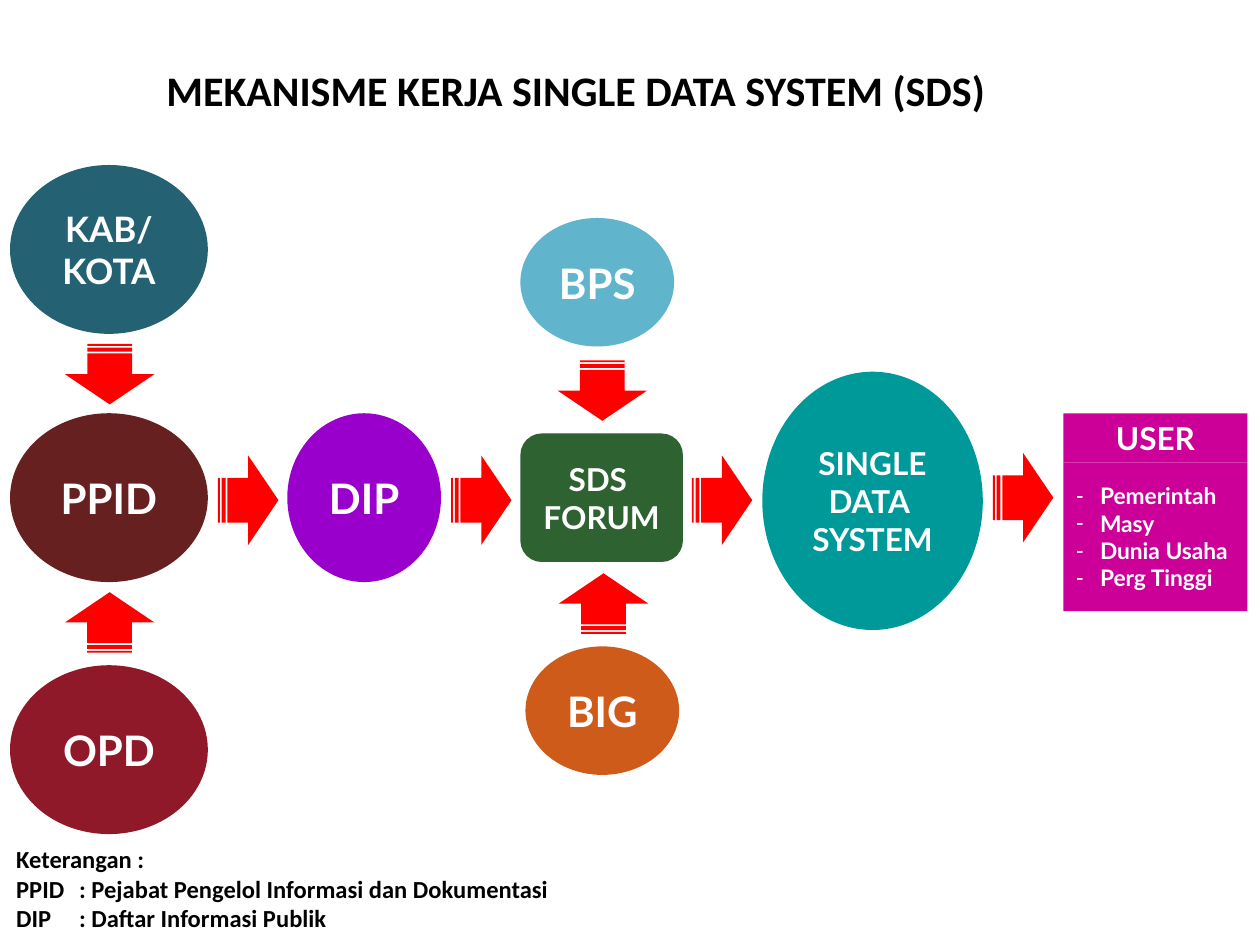
from lxml import etree
from pptx import Presentation
from pptx.dml.color import RGBColor
from pptx.enum.shapes import MSO_SHAPE as SHAPE
from pptx.enum.text import MSO_ANCHOR as ANCHOR, MSO_AUTO_SIZE as AUTO, PP_ALIGN as ALIGN
from pptx.oxml.ns import qn
from pptx.util import Inches, Pt


def color(value):
    return RGBColor.from_string(value)


class Diagram:
    WHITE, BLACK, RED = "FFFFFF", "000000", "FF0000"
    ARROW_W, ARROW_H = 0.48, 0.71

    def __init__(self, slide):
        self.s = slide

    def place(self, sp, box):
        for name, value in zip(("left", "top", "width", "height"), box):
            setattr(sp, name, Inches(value))

    def paint(self, sp, fill):
        sp.fill.solid()
        sp.fill.fore_color.rgb = color(fill)
        sp.line.fill.background()

    def add_lines(self, sp, lines, size, font="Lato", ink=WHITE,
                  align=ALIGN.CENTER, anchor=ANCHOR.MIDDLE):
        tf = sp.text_frame
        frame = {"word_wrap": True, "auto_size": AUTO.NONE, "vertical_anchor": anchor}
        for name, value in frame.items():
            setattr(tf, name, value)
        for i, line in enumerate(lines):
            p = tf.add_paragraph() if i else tf.paragraphs[0]
            p.alignment, p.space_before = align, Pt(0)
            r = p.add_run()
            r.text = line
            for name, value in {"name": font, "size": Pt(size), "bold": True}.items():
                setattr(r.font, name, value)
            r.font.color.rgb = color(ink)

    def node(self, kind, box, fill, lines, size):
        sp = self.s.shapes.add_shape(kind, *map(Inches, box))
        sp.shadow.inherit = False
        self.paint(sp, fill)
        self.add_lines(sp, lines, size)

    def arrow(self, cx, cy, rotation=0):
        box = (cx - self.ARROW_W / 2, cy - self.ARROW_H / 2, self.ARROW_W, self.ARROW_H)
        sp = self.s.shapes.add_shape(SHAPE.STRIPED_RIGHT_ARROW, *map(Inches, box))
        sp.shadow.inherit = False
        sp.rotation = rotation
        self.paint(sp, self.RED)

    def title(self, box, text):
        sp = self.s.shapes.title
        self.place(sp, box)
        self.add_lines(sp, [text], 24, "Calibri", self.BLACK, ALIGN.LEFT)

    def bullets(self, box, fill, lines, size):
        sp = self.s.placeholders[1]
        self.place(sp, box)
        self.paint(sp, fill)
        self.add_lines(sp, lines, size, align=ALIGN.LEFT)
        for p in sp.text_frame.paragraphs:
            pPr = p._p.get_or_add_pPr()
            pPr.set("marL", str(Inches(0.19)))
            pPr.set("indent", str(-Inches(0.19)))
            etree.SubElement(pPr, qn("a:buChar")).set("char", "-")

    def note(self, box, lines):
        sp = self.s.shapes.add_textbox(*map(Inches, box))
        self.add_lines(sp, lines, 14, "Calibri", self.BLACK, ALIGN.LEFT, ANCHOR.TOP)


def main():
    prs = Presentation()
    prs.slide_width, prs.slide_height = Inches(10), Inches(7.5)
    d = Diagram(prs.slides.add_slide(prs.slide_layouts[1]))

    d.title((1.22, 0.46, 7.46, 0.5), "MEKANISME KERJA SINGLE DATA SYSTEM (SDS)")

    # Data sources, forum and system
    ovals = [
        ((0.08, 1.31, 1.57, 1.34), "246172", ["KAB/KOTA"], 20),
        ((0.08, 3.28, 1.57, 1.34), "672020", ["PPID"], 24),
        ((0.08, 5.28, 1.57, 1.34), "901929", ["OPD"], 24),
        ((2.28, 3.28, 1.22, 1.34), "9900CC", ["DIP"], 24),
        ((6.05, 2.95, 1.75, 2.05), "009999", ["SINGLE", "DATA ", "SYSTEM"], 18),
        ((4.13, 1.73, 1.22, 1.02), "60B5CC", ["BPS"], 24),
        ((4.17, 5.13, 1.22, 1.02), "CF5B1B", ["BIG"], 24),
    ]
    for oval in ovals:
        d.node(SHAPE.OVAL, *oval)
    d.node(SHAPE.ROUNDED_RECTANGLE, (4.13, 3.44, 1.29, 1.02), "2F6231", ["SDS ", "FORUM"], 18)

    # Flow to the right, then down and up into PPID and the forum
    for cx, cy in ((1.97, 3.97), (3.82, 3.97), (5.73, 3.97), (8.12, 3.95)):
        d.arrow(cx, cy)
    for cx, cy, rotation in ((0.87, 2.97, 90), (0.87, 4.94, 270),
                             (4.78, 3.1, 90), (4.79, 4.79, 270)):
        d.arrow(cx, cy, rotation)

    # Users
    d.node(SHAPE.RECTANGLE, (8.44, 3.28, 1.46, 0.39), "CC0099", ["USER"], 18)
    d.bullets((8.44, 3.67, 1.46, 1.18), "CC0099",
              ["Pemerintah", "Masy", "Dunia Usaha", "Perg Tinggi"], 13)

    # Legend
    d.note((0.03, 6.65, 5.11, 0.81),
           ["Keterangan :",
            "PPID\t: Pejabat Pengelol Informasi dan Dokumentasi",
            "DIP\t: Daftar Informasi Publik"])

    prs.save("out.pptx")


if __name__ == "__main__":
    main()
